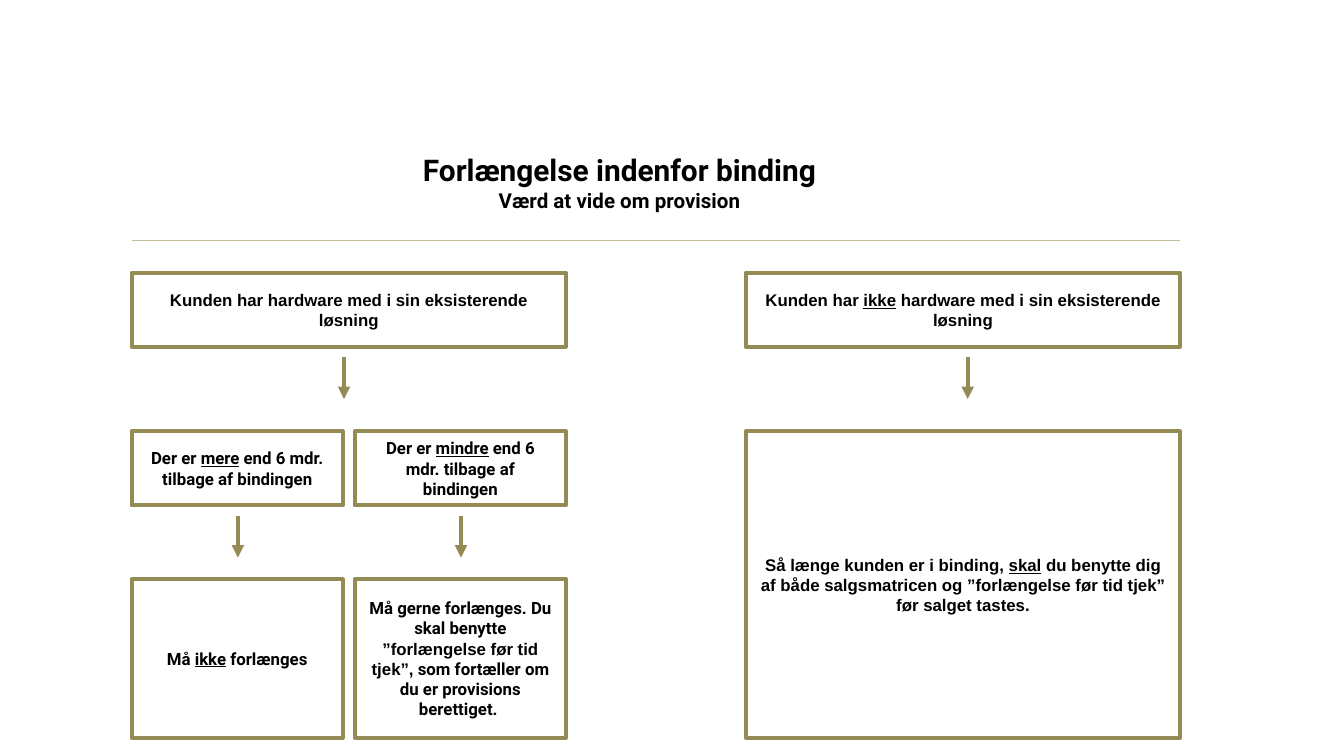
from lxml import etree
from pptx import Presentation
from pptx import util as u
from pptx.dml.color import RGBColor
from pptx.enum import shapes, text
from pptx.oxml.ns import qn

# Content
HEADING = [("Forlængelse indenfor binding", 16), ("Værd at vide om provision", 11)]

# Grid: (left, width) of the columns, (top, height) of the rows, in inches
COLUMNS = {"left": (0.98, 3.23), "more": (0.98, 1.57),
           "less": (2.64, 1.57), "right": (5.55, 3.23)}
ROWS = {"hardware": (2.03, 0.55), "period": (3.21, 0.55),
        "outcome": (4.31, 1.18), "rule": (3.21, 2.28)}

# Boxes: column, row, font, runs as (words, mark)
BOXES = [
    ("left", "hardware", "Arial",
     [("Kunden har hardware med i sin eksisterende løsning", "")]),
    ("right", "hardware", "Arial",
     [("Kunden har ", ""), ("ikke", "underline"),
      (" hardware med i sin eksisterende løsning", "")]),
    ("more", "period", "Roboto",
     [("Der er ", ""), ("mere", "underline"), (" end 6 mdr. tilbage af bindingen", "")]),
    ("less", "period", "Roboto",
     [("Der er ", ""), ("mindre", "underline"), (" end 6 mdr. tilbage af bindingen", "")]),
    ("more", "outcome", "Roboto",
     [("Må ", ""), ("ikke", "underline"), (" forlænges", "")]),
    ("less", "outcome", "Roboto",
     [("Må gerne forlænges. Du skal benytte ", ""),
      ("”forlængelse før tid tjek”,", "Arial"),
      (" som fortæller om du er provisions berettiget. ", "")]),
    ("right", "rule", "Arial",
     [("Så længe kunden er i binding, ", ""), ("skal", "underline"),
      (" du benytte dig af både salgsmatricen og ”forlængelse før tid tjek” "
       "før salget tastes.", "")]),
]

# Arrows: the row they leave, and their x
ARROWS = [("hardware", 2.56), ("hardware", 7.2), ("period", 1.77), ("period", 3.43)]
ARROW_GAP, ARROW_LENGTH = 0.08, 0.31
OLIVE, SAND, BLACK, WHITE = "948A54", "C4BD97", "000000", "FFFFFF"


def rgb(value):
    return RGBColor.from_string(value)


def style(paragraph, font, size):
    paragraph.alignment = text.PP_ALIGN.CENTER
    paragraph.font.name = font
    paragraph.font.size = u.Pt(size)
    paragraph.font.bold = True
    paragraph.font.color.rgb = rgb(BLACK)


def add_line(slide, start, end, color, width, arrow=False):
    line = slide.shapes.add_connector(
        shapes.MSO_CONNECTOR.STRAIGHT, *map(u.Inches, start + end))
    line.line.color.rgb = rgb(color)
    line.line.width = u.Pt(width)
    if arrow:
        outline = line._element.spPr.find(qn("a:ln"))
        etree.SubElement(outline, qn("a:tailEnd"), type="triangle")
    etree.SubElement(line._element.spPr, qn("a:effectLst"))


def add_box(slide, column, row, font, runs):
    left, width = COLUMNS[column]
    top, height = ROWS[row]
    box = slide.shapes.add_shape(
        shapes.MSO_SHAPE.RECTANGLE, *map(u.Inches, (left, top, width, height)))
    box.shadow.inherit = False
    box.fill.solid()
    box.fill.fore_color.rgb = rgb(WHITE)
    box.line.color.rgb = rgb(OLIVE)
    box.line.width = u.Pt(2.25)
    frame = box.text_frame
    frame.word_wrap = True
    frame.vertical_anchor = text.MSO_ANCHOR.MIDDLE
    paragraph = frame.paragraphs[0]
    style(paragraph, font, 9)
    for words, mark in runs:
        run = paragraph.add_run()
        run.text = words
        if mark == "underline":
            run.font.underline = True
        elif mark:
            run.font.name = mark


def main():
    # Widescreen, 16:9
    deck = Presentation()
    deck.slide_width = u.Inches(10)
    deck.slide_height = deck.slide_width * 9 // 16
    slide = deck.slides.add_slide(deck.slide_layouts[5])

    # Heading and rule
    title = slide.shapes.title
    title.left, title.top, title.width, title.height = map(
        u.Inches, (2.72, 1.08, 3.78, 0.56))
    frame = title.text_frame
    frame.text = "\n".join(words for words, _ in HEADING)
    frame.word_wrap = True
    frame.auto_size = text.MSO_AUTO_SIZE.NONE
    frame.vertical_anchor = text.MSO_ANCHOR.TOP
    for paragraph, (_, size) in zip(frame.paragraphs, HEADING):
        style(paragraph, "Roboto", size)
        paragraph.space_before = u.Pt(0)
    add_line(slide, (0.98, 1.79), (8.78, 1.79), SAND, 0.75)

    # Flow
    for box in BOXES:
        add_box(slide, *box)
    for row, x in ARROWS:
        y = sum(ROWS[row]) + ARROW_GAP
        add_line(slide, (x, y), (x, y + ARROW_LENGTH), OLIVE, 2.25, arrow=True)

    deck.save("out.pptx")


if __name__ == "__main__":
    main()
